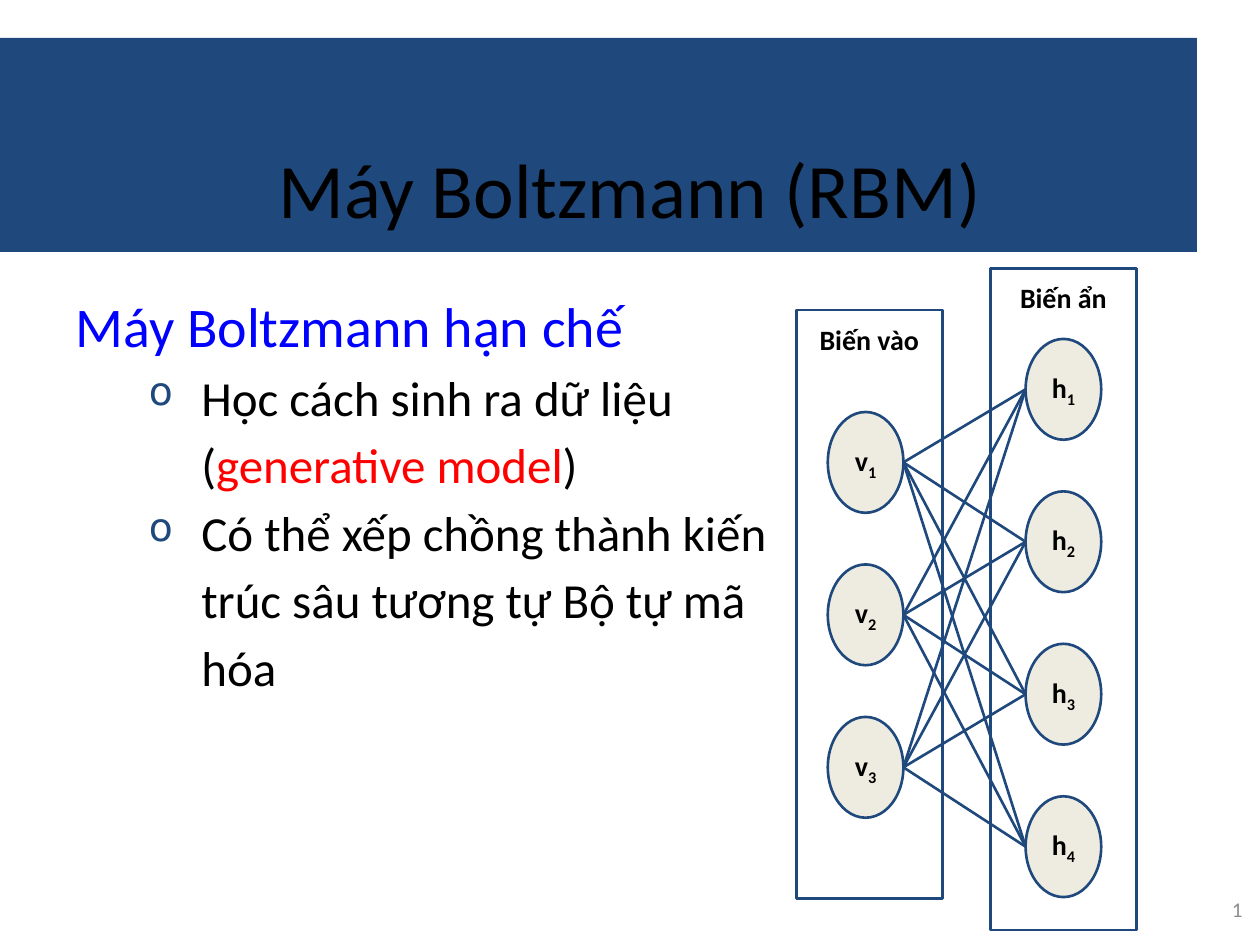
import pptx
import pptx.util
import pptx.dml.color
import pptx.enum.shapes
import pptx.enum.text
import pptx.oxml.ns
import lxml.etree

Pt = pptx.util.Pt
SHAPE = pptx.enum.shapes.MSO_SHAPE
ALIGN = pptx.enum.text.PP_ALIGN
ANCHOR = pptx.enum.text.MSO_ANCHOR
qn = pptx.oxml.ns.qn

COLORS = {
    "navy": "1F497D",
    "cream": "EEECE1",
    "white": "FFFFFF",
    "black": "000000",
    "blue": "0000FF",
    "red": "FF0000",
    "gray": "8C8C8C",
}


def rgb(color):
    return pptx.dml.color.RGBColor.from_string(COLORS[color])


def add_run(paragraph, text, size, color="black", bold=False, subscript=False):
    run = paragraph.add_run()
    run.text = text
    run.font.name = "Calibri"
    run.font.size = Pt(size)
    run.font.bold = bold
    run.font.color.rgb = rgb(color)
    if subscript:
        run._r.get_or_add_rPr().set("baseline", "-25000")


def set_frame(shape, anchor, align):
    frame = shape.text_frame
    frame.word_wrap = True
    frame.vertical_anchor = anchor
    frame.margin_left = frame.margin_right = Pt(7.2)
    frame.margin_top = frame.margin_bottom = Pt(7.2)
    frame.paragraphs[0].alignment = align
    return frame


def add_text(slide, box, anchor=ANCHOR.TOP, align=ALIGN.LEFT):
    return set_frame(slide.shapes.add_textbox(*map(Pt, box)), anchor, align)


def add_outline(slide, kind, box, fill, line="navy"):
    outline = slide.shapes.add_shape(kind, *map(Pt, box))
    outline.shadow.inherit = False
    outline.fill.solid()
    outline.fill.fore_color.rgb = rgb(fill)
    if line:
        outline.line.color.rgb = rgb(line)
        outline.line.width = Pt(1.5)
    else:
        outline.line.fill.background()
    return outline


def add_bullet(paragraph):
    properties = paragraph._p.get_or_add_pPr()
    properties.set("lvl", "1")
    properties.set("marL", str(Pt(72)))
    properties.set("indent", str(-Pt(30)))
    bullet_color = lxml.etree.SubElement(properties, qn("a:buClr"))
    lxml.etree.SubElement(bullet_color, qn("a:srgbClr"), val=COLORS["navy"])
    lxml.etree.SubElement(properties, qn("a:buSzPct"), val="80000")
    lxml.etree.SubElement(properties, qn("a:buChar"), char="o")


def add_title(slide, box):
    left, top, width, height = box
    add_outline(slide, SHAPE.RECTANGLE, box, "navy", None)
    title_box = (left + 36, top, width - 36, height - 2.88)
    title = add_text(slide, title_box, ANCHOR.BOTTOM, ALIGN.CENTER)
    add_run(title.paragraphs[0], "Máy Boltzmann (RBM)", 44)


def add_description(slide, box):
    description = add_text(slide, box)
    heading = description.paragraphs[0]
    heading.line_spacing = 1.15
    add_run(heading, "Máy Boltzmann hạn chế", 32, "blue")
    points = [
        [("Học cách sinh ra dữ liệu (", "black"), ("generative model", "red"), (")", "black")],
        [("Có thể xếp chồng thành kiến trúc sâu tương tự Bộ tự mã hóa", "black")],
    ]
    for pieces in points:
        point = description.add_paragraph()
        add_bullet(point)
        point.line_spacing = 1.15
        for text, color in pieces:
            add_run(point, text, 28, color)


def add_layer_panel(slide, box, label):
    panel = add_outline(slide, SHAPE.RECTANGLE, box, "white")
    frame = set_frame(panel, ANCHOR.TOP, ALIGN.CENTER)
    add_run(frame.paragraphs[0], label, 16, bold=True)


def add_units(slide, left, top, letter, count):
    width, height, pitch = 43.2, 57.6, 87.12
    centers = []
    for index in range(count):
        unit_top = top + index * pitch
        unit = add_outline(slide, SHAPE.OVAL, (left, unit_top, width, height), "cream")
        label = set_frame(unit, ANCHOR.MIDDLE, ALIGN.CENTER).paragraphs[0]
        add_run(label, letter, 16, bold=True)
        add_run(label, str(index + 1), 16, bold=True, subscript=True)
        centers.append(unit_top + height / 2)
    return left + width, centers


def add_weight(slide, start, end):
    weight = slide.shapes.add_connector(
        pptx.enum.shapes.MSO_CONNECTOR.STRAIGHT, *map(Pt, start + end))
    weight.line.color.rgb = rgb("navy")
    weight.line.width = Pt(1.5)
    lxml.etree.SubElement(weight._element.spPr, qn("a:effectLst"))


def add_network(slide, box):
    left, top, width, height = box
    panel_width = 83.52
    hidden_left = left + width - panel_width
    add_layer_panel(slide, (hidden_left, top, panel_width, height), "Biến ẩn")
    add_layer_panel(slide, (left, top + 23.76, panel_width, 336.24), "Biến vào")
    visible_right, visible_centers = add_units(slide, left + 18, top + 82.08, "v", 3)
    unit_left = hidden_left + 20.16
    _, hidden_centers = add_units(slide, unit_left, top + 40.32, "h", 4)
    for visible_y in visible_centers:
        for hidden_y in hidden_centers:
            add_weight(slide, (visible_right, visible_y), (unit_left, hidden_y))


def add_page_number(slide, box):
    page = add_text(slide, box, ANCHOR.MIDDLE, ALIGN.RIGHT)
    add_run(page.paragraphs[0], "1", 12, "gray")


def main():
    presentation = pptx.Presentation()
    presentation.slide_width = Pt(720)
    presentation.slide_height = Pt(540)
    slide = presentation.slides.add_slide(presentation.slide_layouts[6])
    add_title(slide, (0, 21.6, 684, 122.4))
    add_description(slide, (36, 153.36, 421.92, 363.6))
    add_network(slide, (455.04, 153.36, 194.4, 378))
    add_page_number(slide, (673.92, 498.96, 43.2, 41.04))
    presentation.save("out.pptx")


if __name__ == "__main__":
    main()
